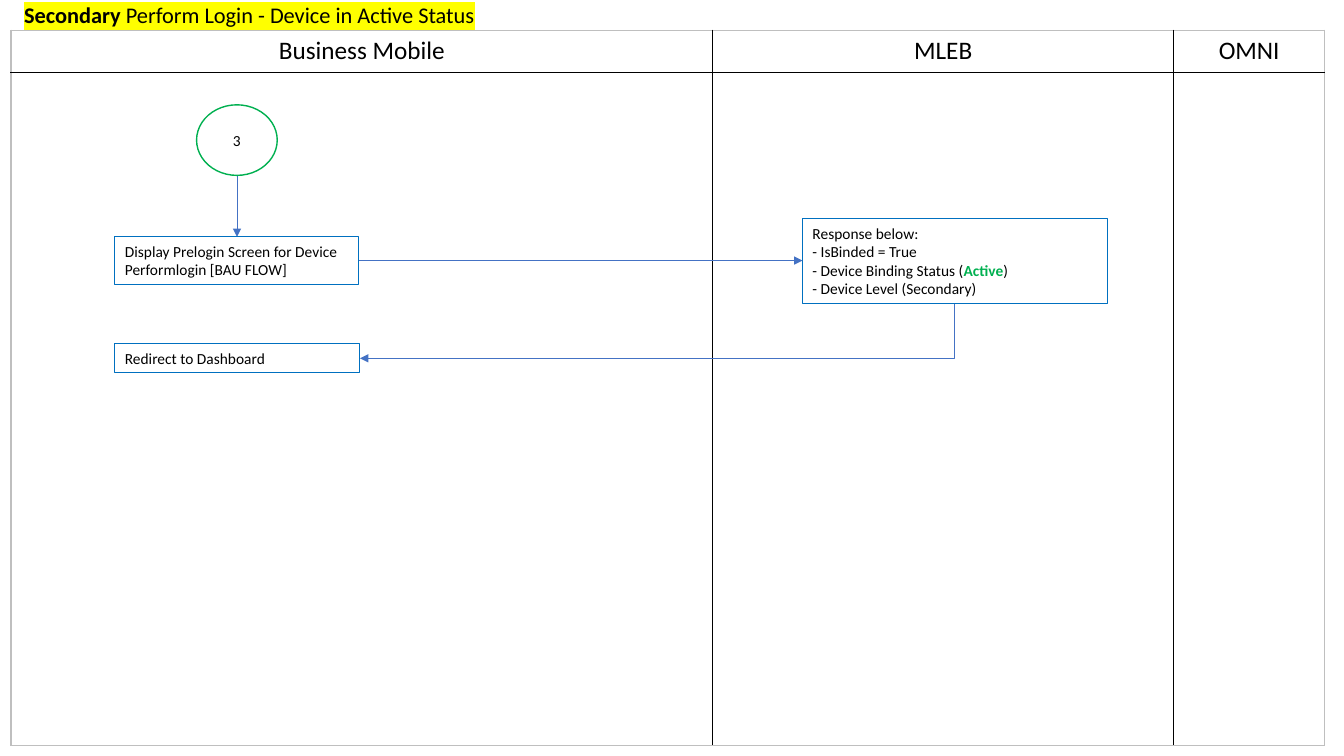
from dataclasses import dataclass

from lxml.etree import SubElement
from pptx import Presentation
from pptx.dml.color import RGBColor
from pptx.enum.shapes import MSO_CONNECTOR as Link, MSO_SHAPE as Form
from pptx.enum.text import MSO_ANCHOR as Anchor, MSO_AUTO_SIZE as Fit, PP_ALIGN as Align
from pptx.oxml.ns import qn
from pptx.util import Inches, Pt


@dataclass(frozen=True)
class Theme:
    """Colours, font and type sizes of the slide."""
    font: str = "Calibri"
    ink: str = "000000"
    edge: str = "BFBFBF"
    blue: str = "0070C0"
    green: str = "00B050"
    arrow: str = "4472C4"
    mark: str = "FFFF00"
    title: int = 16
    head: int = 18
    body: int = 11


THEME = Theme()


def write(frame, *paras, size=THEME.body, align=Align.LEFT, anchor=Anchor.MIDDLE, mark=None):
    """Fill a text frame; each paragraph is a string or a list of (text, bold, colour)."""
    frame.word_wrap = True
    frame.vertical_anchor = anchor
    for i, runs in enumerate(paras):
        para = frame.paragraphs[0] if i == 0 else frame.add_paragraph()
        para.alignment = align
        for text, bold, tint in [(runs, False, THEME.ink)] if isinstance(runs, str) else runs:
            run = para.add_run()
            run.text = text
            font = run.font
            font.size, font.bold = Pt(size), bold
            font.color.rgb = RGBColor.from_string(tint)
            if mark:
                light = SubElement(run._r.get_or_add_rPr(), qn("a:highlight"))
                SubElement(light, qn("a:srgbClr"), val=mark)
            font.name = THEME.font


def border(cell, sides):
    """Draw the four cell edges in the given colours."""
    props = cell._tc.get_or_add_tcPr()
    for i, (side, tint) in enumerate(sides.items()):
        line = props.makeelement(qn(f"a:ln{side}"), w=str(Pt(1)))
        SubElement(SubElement(line, qn("a:solidFill")), qn("a:srgbClr"), val=tint)
        props.insert(i, line)


def lanes(slide, x, y, names, widths, heights):
    """Place the swimlane table with its heading row."""
    rows, cols = len(heights), len(widths)
    table = slide.shapes.add_table(rows, cols, Inches(x), Inches(y),
                                   Inches(sum(widths)), Inches(sum(heights))).table
    table.first_row = table.horz_banding = False
    for col, width in zip(table.columns, widths):
        col.width = Inches(width)
    for r, height in enumerate(heights):
        table.rows[r].height = Inches(height)
        for c, name in enumerate(names):
            cell = table.cell(r, c)
            cell.fill.background()
            outer = {"L": c == 0, "R": c == cols - 1, "T": r == 0, "B": r == rows - 1}
            border(cell, {s: THEME.edge if out else THEME.ink for s, out in outer.items()})
            if r == 0:
                write(cell.text_frame, name, size=THEME.head, align=Align.CENTER, anchor=Anchor.TOP)


def title(slide, x, y, w, h):
    """Place the marked heading."""
    frame = slide.shapes.add_textbox(*map(Inches, (x, y, w, h))).text_frame
    write(frame, [("Secondary", True, THEME.ink),
                  (" Perform Login - Device in Active Status", False, THEME.ink)],
          size=THEME.title, mark=THEME.mark)
    frame.auto_size = Fit.SHAPE_TO_FIT_TEXT


def node(slide, box, *paras, form=Form.RECTANGLE, tint=THEME.blue, line=0.75, grow=True, **style):
    """Place an outlined flow step with its text."""
    shape = slide.shapes.add_shape(form, *map(Inches, box))
    shape.shadow.inherit = False
    shape.fill.background()
    shape.line.color.rgb = RGBColor.from_string(tint)
    shape.line.width = Pt(line)
    write(shape.text_frame, *paras, **style)
    shape.text_frame.auto_size = Fit.SHAPE_TO_FIT_TEXT if grow else Fit.NONE


def arrow(slide, x1, y1, x2, y2, bent=False):
    """Draw an arrow, straight or going down and then left."""
    ends = x1, y1, x2, y2
    if bent:
        mx, my = (x1 + x2) / 2, (y1 + y2) / 2
        dx, dy = (x1 - x2) / 2, (y2 - y1) / 2
        ends = mx - dy, my - dx, mx + dy, my + dx
    link = slide.shapes.add_connector(Link.ELBOW if bent else Link.STRAIGHT, *map(Inches, ends))
    link.line.color.rgb = RGBColor.from_string(THEME.arrow)
    link.line.width = Pt(0.5)
    props = link._element.spPr
    if bent:
        props.find(qn("a:xfrm")).set("rot", str(90 * 60000))
        props.find(qn("a:prstGeom")).set("prst", "bentConnector2")
    SubElement(props.find(qn("a:ln")), qn("a:tailEnd"), type="triangle")
    SubElement(props, qn("a:effectLst"))


def flow(slide, x, y):
    """Place the login steps and the arrows between them."""
    start = x + 0.81, y, 0.8, 0.7
    login = x, y + 1.31, 2.42, 0.47
    reply = x + 6.82, y + 1.13, 3.02, 0.84
    dash = x, y + 2.37, 2.43, 0.29
    mid = start[0] + start[2] / 2
    row = login[1] + login[3] / 2
    arrow(slide, mid, y + start[3], mid, login[1])
    node(slide, login, "Display Prelogin Screen for Device Performlogin [BAU FLOW]")
    arrow(slide, reply[0] + reply[2] / 2, reply[1] + reply[3],
          x + dash[2], dash[1] + dash[3] / 2, bent=True)
    node(slide, dash, "Redirect to Dashboard", anchor=Anchor.TOP)
    node(slide, start, "3", form=Form.OVAL, tint=THEME.green, line=1, grow=False,
         align=Align.CENTER)
    node(slide, reply, "Response below:", "- IsBinded = True",
         [("- Device Binding Status (", False, THEME.ink), ("Active", True, THEME.green),
          (")", False, THEME.ink)],
         "- Device Level (Secondary)")
    arrow(slide, x + login[2], row, reply[0], row)


def main():
    """Build and save the slide."""
    deck = Presentation()
    deck.slide_width, deck.slide_height = Inches(13.33), Inches(7.5)
    slide = deck.slides.add_slide(deck.slide_layouts[6])
    lanes(slide, 0.11, 0.3, ("Business Mobile", "MLEB", "OMNI"), (6.96, 4.57, 1.5), (0.42, 6.68))
    title(slide, 0.14, -0.04, 5.65, 0.37)
    flow(slide, 1.14, 1.04)
    deck.save("out.pptx")


if __name__ == "__main__":
    main()
